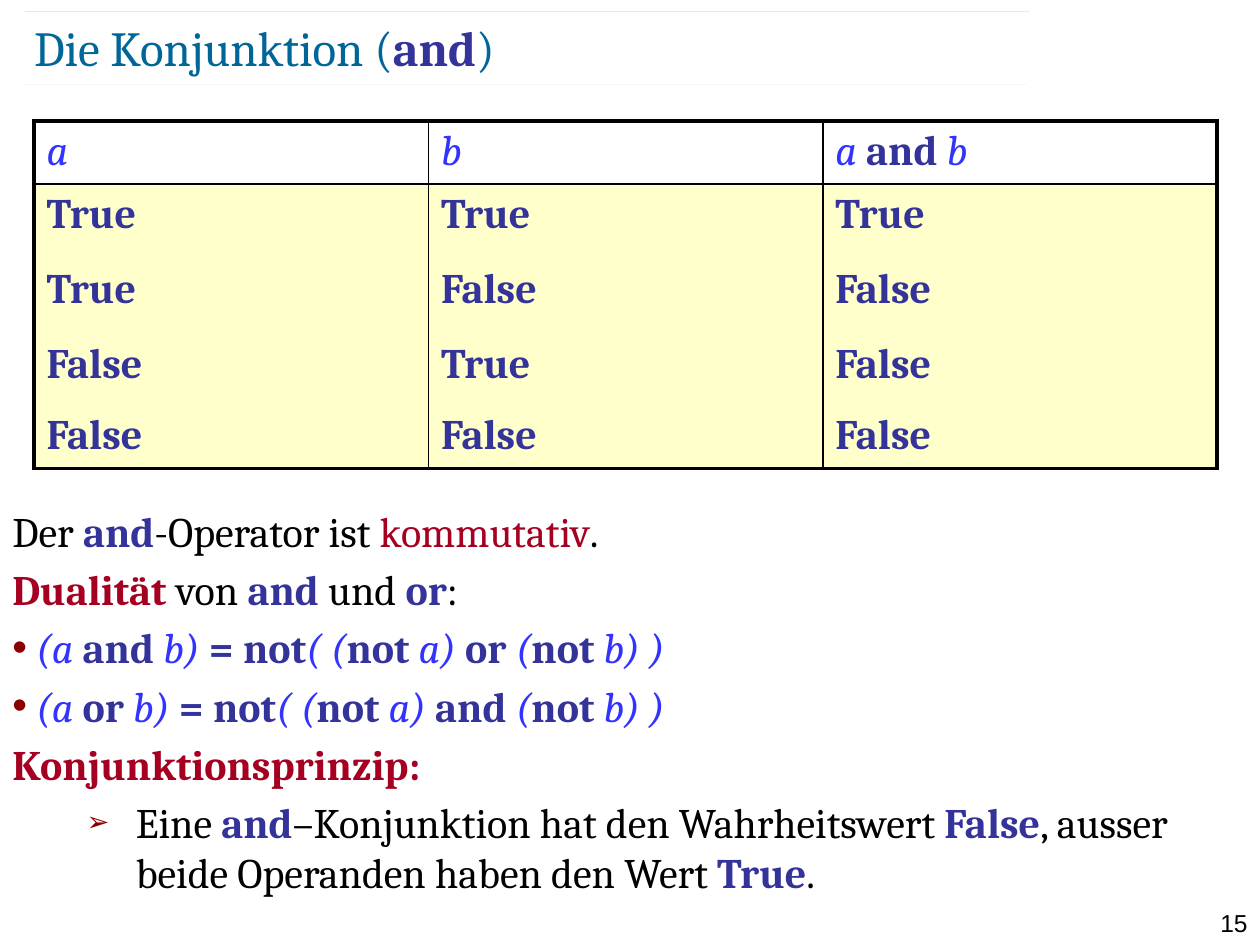
"""Build the slide on logical conjunction: truth table, duality and principle."""
from lxml.etree import SubElement
from pptx import Presentation
from pptx.dml.color import RGBColor
from pptx.enum.shapes import MSO_CONNECTOR
from pptx.enum.text import MSO_ANCHOR, PP_ALIGN
from pptx.oxml.ns import qn
from pptx.util import Inches, Pt

COLORS = {"black": "000000", "teal": "006699", "navy": "333399", "blue": "3333FF",
          "red": "A50021", "bullet": "8B0000", "cream": "FFFFCC"}
STYLES = {
    "plain": {"color": "black"},
    "title": {"color": "teal"},
    "code": {"color": "navy", "bold": True},
    "var": {"color": "blue", "italic": True},
    "key": {"color": "red"},
    "strong": {"color": "red", "bold": True},
}
TITLE = [("title", "Die Konjunktion ("), ("code", "and"), ("title", ")")]
HEADER = [[("var", "a")], [("var", "b")], [("var", "a "), ("code", "and "), ("var", "b")]]
TRUTH = [("True", "True", "True"), ("True", "False", "False"),
         ("False", "True", "False"), ("False", "False", "False")]
ROW_HEIGHTS = [0.46, 0.6, 0.59, 0.57, 0.48]
COLUMN_WIDTH = 3.13
RULES = [(0.18, 0.67), (0.2, 0.09)]
RULE_LENGTH = 7.97
SPACE_BEFORE = 4.5


def duality(left, right):
    return [("plain", " "), ("var", "(a "), ("code", left + " "), ("var", "b) "),
            ("code", "= not"), ("var", "( ("), ("code", "not "), ("var", "a) "),
            ("code", right + " "), ("var", "("), ("code", "not "), ("var", "b) )")]


DOT = {"char": "•", "size": 100, "margin": 0, "indent": 0}
ARROW = {"char": "➢", "size": 65, "margin": 0.98, "indent": -0.39}
BODY = [
    (None, [("plain", "Der"), ("code", " and"), ("plain", "-Operator ist "),
            ("key", "kommutativ"), ("plain", ".")]),
    (None, [("strong", "Dualität "), ("plain", "von"), ("code", " and "),
            ("plain", "und"), ("code", " or"), ("plain", ":")]),
    (DOT, duality("and", "or")),
    (DOT, duality("or", "and")),
    (None, [("strong", "Konjunktionsprinzip:")]),
    (ARROW, [("plain", "Eine "), ("code", "and"),
             ("plain", "–Konjunktion hat den Wahrheitswert "), ("code", "False"),
             ("plain", ", ausser beide Operanden haben den Wert "),
             ("code", "True"), ("plain", ".")]),
]


def add_spans(para, spans, size=24, name="Cambria"):
    for style, text in spans:
        span = para.add_run()
        span.text = text
        formats = {"size": Pt(size), "name": name, "bold": False, "italic": False, **STYLES[style]}
        span.font.color.rgb = RGBColor.from_string(COLORS[formats.pop("color")])
        for key, value in formats.items():
            setattr(span.font, key, value)


def add_box(page, left, top, width, height):
    box = page.shapes.add_textbox(*map(Inches, (left, top, width, height)))
    box.text_frame.word_wrap = True
    return box.text_frame


def add_bullet(para, bullet):
    properties = para._p.get_or_add_pPr()
    properties.set("marL", str(Inches(bullet["margin"])))
    properties.set("indent", str(Inches(bullet["indent"])))
    color = SubElement(properties, qn("a:buClr"))
    SubElement(color, qn("a:srgbClr"), val=COLORS["bullet"])
    SubElement(properties, qn("a:buSzPct"), val=str(bullet["size"] * 1000))
    SubElement(properties, qn("a:buFont"), typeface="Arial")
    SubElement(properties, qn("a:buChar"), char=bullet["char"])


def set_borders(cell, widths):
    properties = cell._tc.get_or_add_tcPr()
    for side, width in zip("LRTB", widths):
        line = SubElement(properties, qn(f"a:ln{side}"), w=str(Pt(width)))
        if width:
            fill = SubElement(line, qn("a:solidFill"))
            SubElement(fill, qn("a:srgbClr"), val=COLORS["black"])
        else:
            SubElement(line, qn("a:noFill"))


def add_rule(page, left, top):
    rule = page.shapes.add_connector(MSO_CONNECTOR.STRAIGHT, Inches(left), Inches(top),
                                     Inches(left + RULE_LENGTH), Inches(top))
    rule.line.width = Pt(0.1)
    rule.line.color.rgb = RGBColor.from_string(COLORS["teal"])
    color = rule.line._ln.find(".//" + qn("a:srgbClr"))
    SubElement(color, qn("a:alpha"), val="35000")
    SubElement(rule._element.spPr, qn("a:effectLst"))


def add_truth_table(page):
    rows = HEADER, *[[[("code", value)] for value in values] for values in TRUTH]
    last_row, last_column = len(rows) - 1, len(HEADER) - 1
    table = page.shapes.add_table(len(rows), len(HEADER), Inches(0.27), Inches(0.96),
                                  Inches(COLUMN_WIDTH * len(HEADER)),
                                  Inches(sum(ROW_HEIGHTS))).table
    table.first_row = table.horz_banding = False
    for column in table.columns:
        column.width = Inches(COLUMN_WIDTH)
    for i, row in enumerate(rows):
        table.rows[i].height = Inches(ROW_HEIGHTS[i])
        for j, spans in enumerate(row):
            cell = table.cell(i, j)
            set_borders(cell, (2.25 if j == 0 else 1,
                               2.25 if j == last_column else 1,
                               {0: 2.25, 1: 1}.get(i, 0),
                               {0: 1, last_row: 2.25}.get(i, 0)))
            if i:
                cell.fill.solid()
                cell.fill.fore_color.rgb = RGBColor.from_string(COLORS["cream"])
            else:
                cell.fill.background()
            add_spans(cell.text_frame.paragraphs[0], spans)


def main():
    deck = Presentation()
    deck.slide_width, deck.slide_height = Inches(10), Inches(7.5)
    page = deck.slides.add_slide(deck.slide_layouts[6])

    number = add_box(page, 9.45, 7.16, 0.55, 0.24).paragraphs[0]
    number.alignment = PP_ALIGN.RIGHT
    add_spans(number, [("plain", "15")], 14, "Arial")
    for left, top in RULES:
        add_rule(page, left, top)

    title = add_box(page, 0.27, 0.13, 8.69, 0.48)
    title.vertical_anchor = MSO_ANCHOR.MIDDLE
    for side in ("left", "top", "right", "bottom"):
        setattr(title, f"margin_{side}", 0)
    add_spans(title.paragraphs[0], TITLE, 28)

    add_truth_table(page)

    body = add_box(page, 0, 3.96, 9.53, 3.39)
    for i, (bullet, spans) in enumerate(BODY):
        para = body.add_paragraph() if i else body.paragraphs[0]
        if i:
            para.space_before = Pt(SPACE_BEFORE)
        if bullet:
            add_bullet(para, bullet)
        para.level = 1 if bullet is ARROW else 0
        add_spans(para, spans)

    deck.save("out.pptx")


if __name__ == "__main__":
    main()
